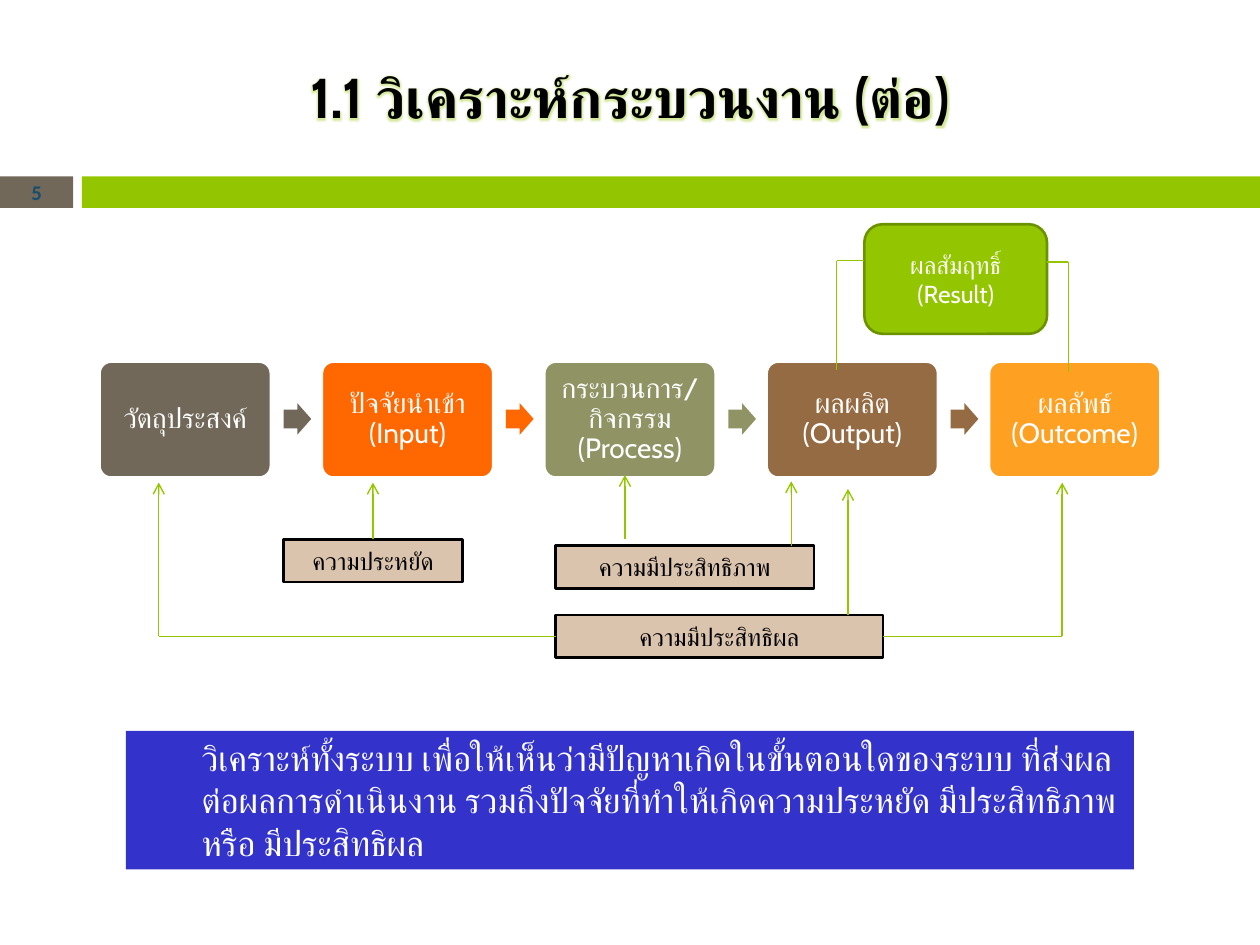
"""Build the slide on analysing a work process from objective to outcome."""
from lxml import etree
from pptx import Presentation
from pptx.dml.color import RGBColor
from pptx.enum.shapes import MSO_CONNECTOR, MSO_SHAPE
from pptx.enum.text import MSO_ANCHOR, PP_ALIGN
from pptx.oxml.ns import qn
from pptx.util import Inches, Pt

RECT, ROUNDED, ARROW = MSO_SHAPE.RECTANGLE, MSO_SHAPE.ROUNDED_RECTANGLE, MSO_SHAPE.RIGHT_ARROW
STRAIGHT = MSO_CONNECTOR.STRAIGHT
MIDDLE, TOP = MSO_ANCHOR.MIDDLE, MSO_ANCHOR.TOP
CENTER, LEFT = PP_ALIGN.CENTER, PP_ALIGN.LEFT

WHITE = RGBColor(0xFF, 0xFF, 0xFF)
BLACK = RGBColor(0x00, 0x00, 0x00)
GREEN = RGBColor(0x94, 0xC6, 0x00)
DARK_GREEN = RGBColor(0x6D, 0x92, 0x00)
TAUPE = RGBColor(0x71, 0x68, 0x5A)
ORANGE = RGBColor(0xFF, 0x67, 0x00)
OLIVE = RGBColor(0x90, 0x94, 0x65)
BROWN = RGBColor(0x95, 0x6B, 0x43)
AMBER = RGBColor(0xFE, 0xA0, 0x22)
SAND = RGBColor(0xDB, 0xC4, 0xAE)
BLUE = RGBColor(0x33, 0x33, 0xCC)
NAVY = RGBColor(0x18, 0x4E, 0x6D)

STEPS = [
    ("วัตถุประสงค์", TAUPE),
    ("ปัจจัยนำเข้า (Input)", ORANGE),
    ("กระบวนการ/กิจกรรม (Process)", OLIVE),
    ("ผลผลิต (Output)", BROWN),
    ("ผลลัพธ์ (Outcome)", AMBER),
]
STEP_LEFT, STEP_PITCH = 0.79, 7.06 / 4
SUMMARY = (
    "วิเคราะห์ทั้งระบบ เพื่อให้เห็นว่ามีปัญหาเกิดในขั้นตอนใดของระบบ "
    "ที่ส่งผลต่อผลการดำเนินงาน รวมถึงปัจจัยที่ทำให้เกิดความประหยัด "
    "มีประสิทธิภาพ หรือ มีประสิทธิผล"
)


class ProcessSlide:
    """Hold the font and the slide, and draw each kind of element."""

    def __init__(self, slide, font="Cabin"):
        self.shapes = slide.shapes
        self.font = font

    def label(self, shape, text, size, color, bold=False, font=None,
              align=CENTER, anchor=MIDDLE, inset=0.1):
        frame = shape.text_frame
        frame.word_wrap = True
        frame.vertical_anchor = anchor
        frame.margin_left = frame.margin_right = Inches(inset)
        frame.text = text
        paragraph = frame.paragraphs[0]
        paragraph.alignment = align
        run = paragraph.runs[0]
        run.font.size = Pt(size)
        run.font.bold = bold
        run.font.color.rgb = color
        run.font.name = font or self.font
        etree.SubElement(run.font._element, qn("a:cs"), typeface=font or self.font)
        return paragraph

    def box(self, kind, left, top, width, height, fill, line=None, corner=None):
        shape = self.shapes.add_shape(
            kind, Inches(left), Inches(top), Inches(width), Inches(height))
        shape.shadow.inherit = False
        shape.fill.solid()
        shape.fill.fore_color.rgb = fill
        if line is None:
            shape.line.fill.background()
        else:
            shape.line.color.rgb = line
            shape.line.width = Pt(1.5)
        if corner is not None:
            shape.adjustments[0] = corner
        return shape

    def title(self, text):
        heading = self.shapes.add_textbox(Inches(0.5), Inches(0.3), Inches(9), Inches(0.93))
        run = self.label(heading, text, 32, BLACK, bold=True).runs[0]
        effects = etree.Element(qn("a:effectLst"))
        glow = etree.SubElement(effects, qn("a:glow"), rad="38100")
        tint = etree.SubElement(glow, qn("a:srgbClr"), val=str(GREEN))
        etree.SubElement(tint, qn("a:alpha"), val="40000")
        run.font._element.find(qn("a:latin")).addprevious(effects)

    def step(self, left, text, fill):
        card = self.box(ROUNDED, left, 2.87, 1.36, 0.92, fill, WHITE, corner=0.1)
        self.label(card, text, 16, WHITE, inset=0.07).line_spacing = 0.9

    def criterion(self, left, top, width, text):
        plate = self.box(RECT, left, top, width, 0.34, SAND, BLACK)
        self.label(plate, text, 14, BLACK)
        return plate

    def line(self, start, end, arrow=False, source=None, site=0):
        connector = self.shapes.add_connector(
            STRAIGHT, *(Inches(value) for value in (*start, *end)))
        if source is not None:
            connector.begin_connect(source, site)
        connector.line.color.rgb = GREEN
        connector.line.width = Pt(0.79)
        properties = connector._element.spPr
        if arrow:
            etree.SubElement(properties.find(qn("a:ln")), qn("a:tailEnd"), type="arrow")
        etree.SubElement(properties, qn("a:effectLst"))


def main():
    deck = Presentation()
    deck.slide_width, deck.slide_height = Inches(10), Inches(7.5)
    page = ProcessSlide(deck.slides.add_slide(deck.slide_layouts[6]))

    page_number = page.box(RECT, 0, 1.4, 0.58, 0.25, TAUPE)
    page.label(page_number, "5", 11.9, NAVY, bold=True, font="Calibri")
    page.box(RECT, 0.65, 1.4, 9.35, 0.25, GREEN)
    page.title("1.1 วิเคราะห์กระบวนงาน (ต่อ)")

    result = page.box(ROUNDED, 6.86, 1.78, 1.45, 0.87, GREEN, DARK_GREEN)
    page.label(result, "ผลสัมฤทธิ์ (Result)", 14, WHITE, inset=0.18)

    for index, (text, fill) in enumerate(STEPS):
        left = STEP_LEFT + index * STEP_PITCH
        page.step(left, text, fill)
        if index < len(STEPS) - 1:
            arrow = page.box(ARROW, left + 1.46, 3.2, 0.22, 0.25, fill)
            arrow.adjustments[0] = 0.6

    economy = page.criterion(2.25, 4.28, 1.42, "ความประหยัด")
    page.criterion(4.41, 4.33, 2.05, "ความมีประสิทธิภาพ")
    effectiveness = page.criterion(4.41, 4.88, 2.6, "ความมีประสิทธิผล")

    page.line((2.96, 4.28), (2.96, 3.83), arrow=True, source=economy, site=0)
    for x, bottom, top in [(4.96, 4.28, 3.77), (6.28, 4.33, 3.82), (6.73, 4.88, 3.88)]:
        page.line((x, bottom), (x, top), arrow=True)
    for edge, x, site in [(4.41, 1.26, 1), (7.01, 8.43, 3)]:
        page.line((edge, 5.05), (x, 5.05), source=effectiveness, site=site)
        page.line((x, 5.05), (x, 3.83), arrow=True)
    for edge, x, y in [(6.86, 6.64, 2.07), (8.31, 8.48, 2.08)]:
        page.line((edge, y), (x, y))
        page.line((x, y), (x, y + 0.87))

    summary = page.box(RECT, 1, 5.8, 8, 1.1, BLUE)
    paragraph = page.label(summary, SUMMARY, 20, WHITE, align=LEFT, anchor=TOP)
    paragraph.space_before = Pt(4)
    summary.text_frame.margin_left = Inches(0.6)

    deck.save("out.pptx")


if __name__ == "__main__":
    main()
